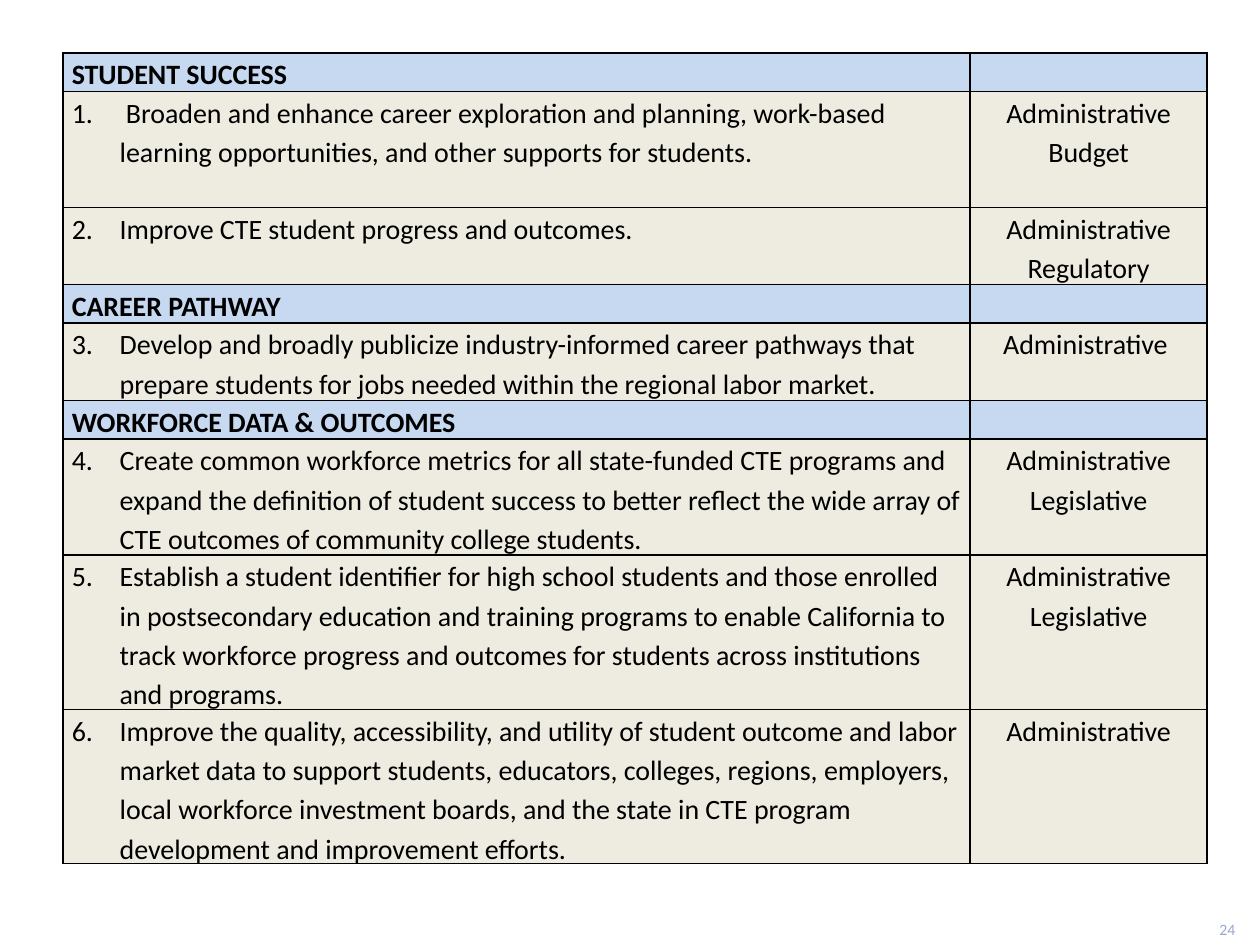
from lxml import etree
from pptx import Presentation
from pptx import util as u
from pptx.dml.color import RGBColor
from pptx.enum import text
from pptx.oxml import ns

BLUE, CREAM = "C6D9F1", "EEECE1"
LINE_HEIGHT = u.Inches(6.43 / 21)


def rgb(value):
    return RGBColor.from_string(value)


def write(paragraph, words, size, color, bold=False):
    run = paragraph.add_run()
    run.text = words
    run.font.color.rgb = rgb(color)
    for name, value in {"name": "Calibri", "size": u.Pt(size), "bold": bold}.items():
        setattr(run.font, name, value)


goals = [
    ("STUDENT SUCCESS", [], 1),
    (" Broaden and enhance career exploration and planning, work-based learning "
     "opportunities, and other supports for students.", ["Administrative", "Budget"], 3),
    ("Improve CTE student progress and outcomes.", ["Administrative", "Regulatory"], 2),
    ("CAREER PATHWAY", [], 1),
    ("Develop and broadly publicize industry-informed career pathways that prepare "
     "students for jobs needed within the regional labor market.", ["Administrative "], 2),
    ("WORKFORCE DATA & OUTCOMES", [], 1),
    ("Create common workforce metrics for all state-funded CTE programs and expand the "
     "definition of student success to better reflect the wide array of CTE outcomes of "
     "community college students.", ["Administrative", "Legislative"], 3),
    ("Establish a student identifier for high school students and those enrolled in "
     "postsecondary education and training programs to enable California to track "
     "workforce progress and outcomes for students across institutions and programs.",
     ["Administrative", "Legislative"], 4),
    ("Improve the quality, accessibility, and utility of student outcome and labor market "
     "data to support students, educators, colleges, regions, employers, local workforce "
     "investment boards, and the state in CTE program development and improvement efforts.",
     ["Administrative"], 4),
]

deck = Presentation()
deck.slide_width, deck.slide_height = u.Inches(10), u.Inches(7.5)
slide = deck.slides.add_slide(deck.slide_layouts[6])

page = slide.shapes.add_textbox(u.Inches(9.58), u.Inches(7.25), u.Inches(0.42), u.Inches(0.25))
page.text_frame.word_wrap = True
page.text_frame.vertical_anchor = text.MSO_ANCHOR.MIDDLE
write(page.text_frame.paragraphs[0], "24", 9, "97A7D0")

table = slide.shapes.add_table(
    len(goals), 2, u.Inches(0.5), u.Inches(0.42), u.Inches(9.08), LINE_HEIGHT * 21).table
table.first_row = table.horz_banding = False
for column, width in zip(table.columns, (7.2, 1.88)):
    column.width = u.Inches(width)

number = 0
for row, (goal, actions, lines) in zip(table.rows, goals):
    row.height = LINE_HEIGHT * lines
    for cell in row.cells:
        for side, inset in {"left": 0.07, "top": 0, "right": 0.07, "bottom": 0}.items():
            setattr(cell, f"margin_{side}", u.Inches(inset))
        properties = cell._tc.get_or_add_tcPr()
        for edge in ("lnL", "lnR", "lnT", "lnB"):
            border = etree.SubElement(properties, ns.qn(f"a:{edge}"), w=str(u.Pt(1)))
            solid = etree.SubElement(border, ns.qn("a:solidFill"))
            etree.SubElement(solid, ns.qn("a:srgbClr"), val="000000")
        cell.fill.solid()
        cell.fill.fore_color.rgb = rgb(CREAM if actions else BLUE)

    goal_cell, action_cell = row.cells
    paragraph = goal_cell.text_frame.paragraphs[0]
    paragraph.line_spacing = 1.15
    if actions:
        number += 1
        layout = paragraph._p.get_or_add_pPr()
        layout.set("marL", str(u.Inches(0.38)))
        layout.set("indent", str(-u.Inches(0.38)))
        etree.SubElement(layout, ns.qn("a:buFont"), typeface="+mj-lt")
        etree.SubElement(layout, ns.qn("a:buAutoNum"), type="arabicPeriod", startAt=str(number))
    write(paragraph, goal, 16, "000000", bold=not actions)

    for index, action in enumerate(actions):
        frame = action_cell.text_frame
        paragraph = frame.add_paragraph() if index else frame.paragraphs[0]
        paragraph.alignment = text.PP_ALIGN.CENTER
        paragraph.line_spacing = 1.15
        write(paragraph, action, 16, "000000")

deck.save("out.pptx")
